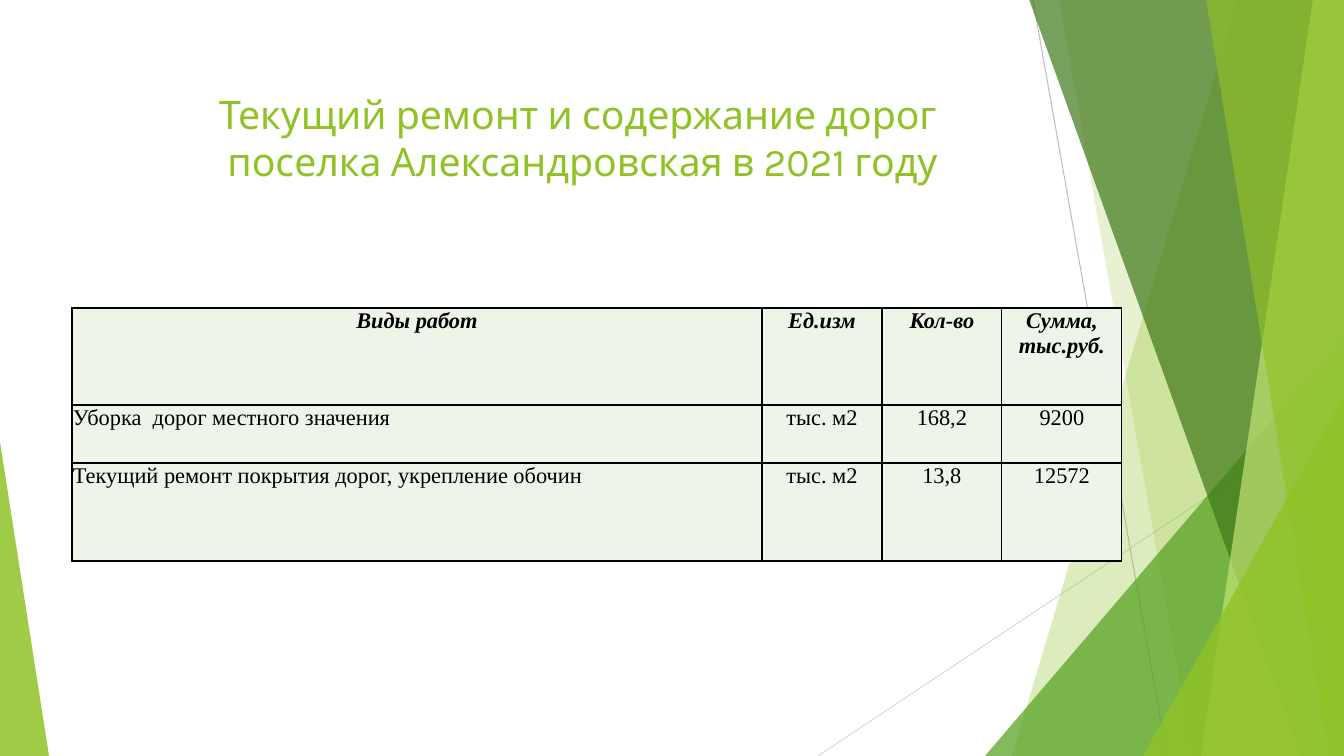
from lxml import etree
from pptx import Presentation
from pptx.dml.color import RGBColor
from pptx.enum.shapes import MSO_CONNECTOR, MSO_SHAPE
from pptx.enum.text import MSO_ANCHOR, PP_ALIGN
from pptx.oxml import parse_xml
from pptx.oxml.ns import nsdecls, qn
from pptx.util import Pt

STRAIGHT = MSO_CONNECTOR.STRAIGHT
TRIANGLE = MSO_SHAPE.ISOSCELES_TRIANGLE
LEFT, CENTER = PP_ALIGN.LEFT, PP_ALIGN.CENTER
TOP = MSO_ANCHOR.TOP
EMU_PER_PX = 914400 / 100.8
SLIDE_W, SLIDE_H = 1344, 756
GREEN = "90C226"
TITLE_ONLY = 5

WORKS = [
    ("Виды работ", "Ед.изм", "Кол-во", "Сумма, тыс.руб."),
    ("Уборка  дорог местного значения", "тыс. м2", "168,2", "9200"),
    ("Текущий ремонт покрытия дорог, укрепление обочин", "тыс. м2", "13,8", "12572"),
]


def px(length):
    return round(length * EMU_PER_PX)


def color(hex_code):
    return RGBColor.from_string(hex_code)


def write(frame, text, *, font, size, ink, align=LEFT, bold=False, italic=False):
    frame.text = text
    for paragraph in frame.paragraphs:
        paragraph.alignment = align
        for run in paragraph.runs:
            run.font.name = font
            run.font.size = Pt(size)
            run.font.color.rgb = color(ink)
            run.font.bold = bold
            run.font.italic = italic


def paint(shape, hex_code, opacity):
    """Fill a facet with a see-through colour and no outline."""
    shape.shadow.inherit = False
    shape.line.fill.background()
    shape.fill.solid()
    shape.fill.fore_color.rgb = color(hex_code)
    tint = shape._element.spPr.find(".//" + qn("a:srgbClr"))
    etree.SubElement(tint, qn("a:alpha")).set("val", str(opacity * 1000))


def add_ray(slide, start, end, hex_code):
    ray = slide.shapes.add_connector(STRAIGHT, *map(px, start + end))
    ray.line.color.rgb = color(hex_code)
    ray.line.width = Pt(0.75)
    etree.SubElement(ray._element.spPr, qn("a:effectLst"))


def add_band(slide, top_x, bottom_x, hex_code, opacity):
    """A full-height band from a slanted left edge to the slide's right side."""
    outline = slide.shapes.build_freeform(px(top_x), px(-1), scale=1.0)
    corners = [(SLIDE_W, -1), (SLIDE_W, SLIDE_H), (bottom_x, SLIDE_H)]
    outline.add_line_segments([(px(x), px(y)) for x, y in corners], close=True)
    paint(outline.convert_to_shape(), hex_code, opacity)


def add_corner(slide, left, top, width, apex, hex_code, opacity):
    """A right triangle standing on the slide's bottom edge."""
    corner = slide.shapes.add_shape(
        TRIANGLE, px(left), px(top), px(width), px(SLIDE_H - top))
    corner.adjustments[0] = apex
    paint(corner, hex_code, opacity)


def draw_facets(slide):
    # Thin rays
    add_ray(slide, (1033, 0), (1167, SLIDE_H), "BFBFBF")
    add_ray(slide, (SLIDE_W, 406), (818, SLIDE_H), "D9D9D9")
    # Overlapping bands and corners on the right
    add_band(slide, 1238, 1012, GREEN, 30)
    add_band(slide, 1059, 1193, GREEN, 20)
    add_corner(slide, 985, 336, 359, 1, "54A021", 72)
    add_band(slide, 1029, 1301, "3F7819", 70)
    add_band(slide, 1313, 1201, "C0E474", 70)
    add_band(slide, 1206, 1329, GREEN, 65)
    add_corner(slide, 1143, 396, 201, 1, GREEN, 80)
    # Left corner
    add_corner(slide, 0, 442, 49, 0, GREEN, 85)


def place_title(slide, left, top, width, height):
    title = slide.shapes.title
    title.left, title.top = px(left), px(top)
    title.width, title.height = px(width), px(height)
    title.text_frame.word_wrap = True
    title.text_frame.vertical_anchor = TOP
    write(title.text_frame,
          "Текущий ремонт и содержание дорог \vпоселка Александровская в 2021 году",
          font="Karla", size=28, ink=GREEN, align=CENTER)
    # Bring the title in front of the facets
    title._element.getparent().append(title._element)


def outline_cell(cell):
    properties = cell._tc.get_or_add_tcPr()
    for position, side in enumerate(("lnL", "lnR", "lnT", "lnB")):
        properties.insert(position, parse_xml(
            f'<a:{side} {nsdecls("a")} w="12700"><a:solidFill>'
            f'<a:srgbClr val="000000"/></a:solidFill></a:{side}>'))


def add_works_table(slide, left, top, column_widths, row_heights):
    works = slide.shapes.add_table(
        len(row_heights), len(column_widths), px(left), px(top),
        px(sum(column_widths)), px(sum(row_heights))).table
    for column, width in zip(works.columns, column_widths):
        column.width = px(width)
    for row, height in zip(works.rows, row_heights):
        row.height = px(height)
    for r, entries in enumerate(WORKS):
        for c, entry in enumerate(entries):
            cell = works.cell(r, c)
            heading = r == 0
            cell.margin_left = cell.margin_right = cell.margin_top = px(1)
            cell.margin_bottom = 0
            cell.vertical_anchor = TOP
            cell.fill.solid()
            cell.fill.fore_color.rgb = color("EEF4E8")
            outline_cell(cell)
            write(cell.text_frame, entry, font="Times New Roman", size=16,
                  ink="000000", align=CENTER if heading or c else LEFT,
                  bold=heading, italic=heading)


def main():
    deck = Presentation()
    deck.slide_width, deck.slide_height = px(SLIDE_W), px(SLIDE_H)
    slide = deck.slides.add_slide(deck.slide_layouts[TITLE_ONLY])
    draw_facets(slide)
    place_title(slide, 35, 85, 1095, 141)
    add_works_table(slide, 72, 308, [690, 120, 120, 120], [97, 58, 98])
    deck.save("out.pptx")


if __name__ == "__main__":
    main()
